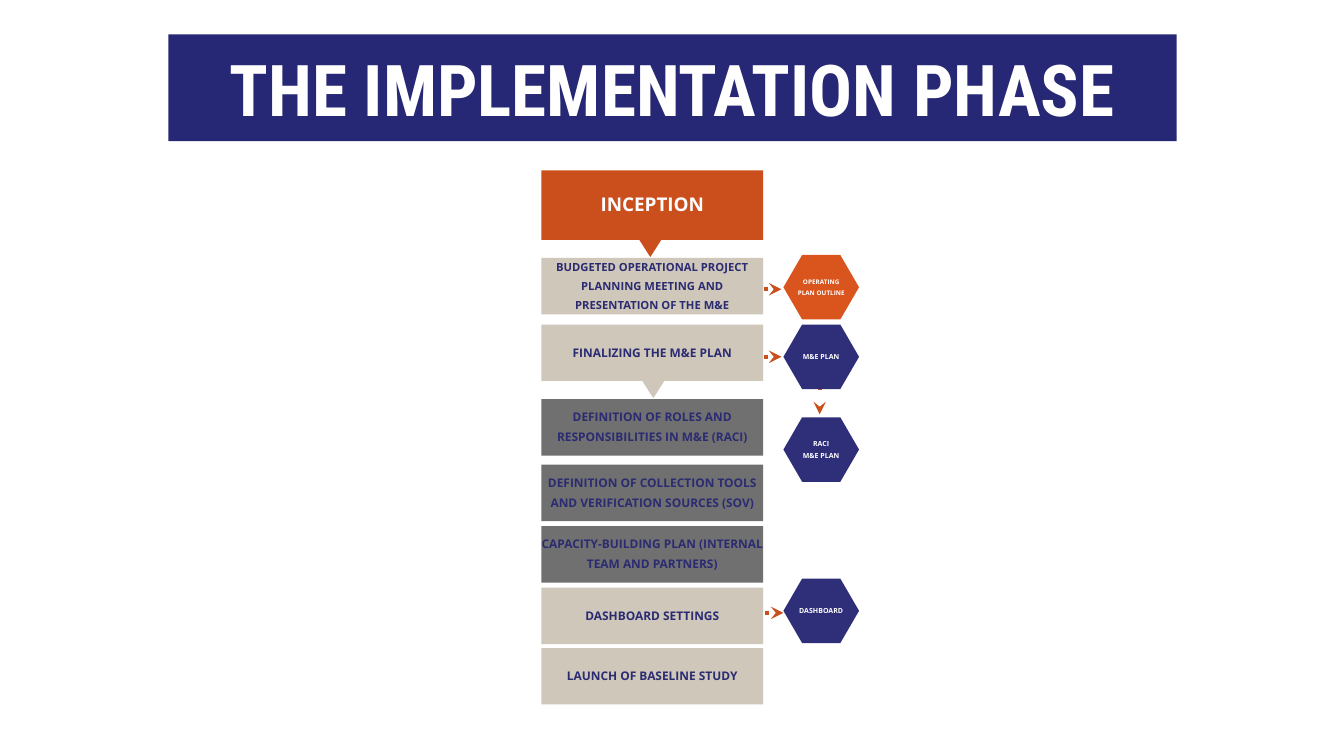
from lxml import etree
from pptx import Presentation
from pptx.dml.color import RGBColor
from pptx.enum import shapes, text
from pptx.oxml.ns import qn
from pptx.util import Inches, Pt

ORANGE, SAND, GREY = "CA4F1C", "CFC7BA", "707070"
NAVY, INK, WHITE = "2E2E79", "2B2B72", "FFFFFF"


def rgb(value):
    return RGBColor.from_string(value)


def add_block(kind, left, top, width, height, fill, label="", size=8.5,
              ink=WHITE, bottom_inset=0.06):
    """Add a filled shape with a bold, centred label."""
    block = slide.shapes.add_shape(
        kind, Inches(left), Inches(top), Inches(width), Inches(height))
    block.shadow.inherit = False
    block.fill.solid()
    block.fill.fore_color.rgb = rgb(fill)
    block.line.fill.background()
    if label:
        frame = block.text_frame
        frame.text = label
        frame.word_wrap = True
        frame.vertical_anchor = text.MSO_ANCHOR.MIDDLE
        frame.margin_left = frame.margin_right = frame.margin_top = 0
        frame.margin_bottom = Inches(bottom_inset)
        for paragraph in frame.paragraphs:
            paragraph.alignment = text.PP_ALIGN.CENTER
            paragraph.line_spacing = 1.4
            font = paragraph.runs[0].font
            font.name, font.size, font.bold = "Open Sans", Pt(size), True
            font.color.rgb = rgb(ink)
    return block


prs = Presentation()
prs.slide_width, prs.slide_height = Inches(13.33), Inches(7.5)
slide = prs.slides.add_slide(prs.slide_layouts[5])

# Title banner
title = slide.shapes.title
title.left, title.top = Inches(1.67), Inches(0.34)
title.width, title.height = Inches(10), Inches(1.06)
title.fill.solid()
title.fill.fore_color.rgb = rgb("262775")
title.text_frame.text = "THE IMPLEMENTATION PHASE"
title.text_frame.auto_size = text.MSO_AUTO_SIZE.NONE
title.text_frame.vertical_anchor = text.MSO_ANCHOR.MIDDLE
heading = title.text_frame.paragraphs[0]
heading.alignment = text.PP_ALIGN.CENTER
heading_font = heading.runs[0].font
heading_font.name, heading_font.size, heading_font.bold = "Roboto Condensed", Pt(51), True
heading_font.color.rgb = rgb(WHITE)

# Phase arrows, partly hidden behind the steps
for left, top, height, fill in [(6.28, 3.27, 0.68, SAND), (6.25, 1.73, 0.82, ORANGE)]:
    phase_arrow = add_block(shapes.MSO_SHAPE.DOWN_ARROW, left, top, 0.4, height, fill)
    phase_arrow.adjustments[0] = 0.22
    phase_arrow.adjustments[1] = 0.78

# Dotted links from steps to deliverables
for x1, y1, x2, y2 in [(6.74, 2.87, 7.75, 2.87), (6.74, 3.54, 7.75, 3.54),
                       (8.13, 3.66, 8.13, 4.11), (6.75, 6.08, 7.77, 6.08)]:
    link = slide.shapes.add_connector(
        shapes.MSO_CONNECTOR.STRAIGHT, Inches(x1), Inches(y1), Inches(x2), Inches(y2))
    link.line.color.rgb = rgb(ORANGE)
    link.line.width = Pt(3)
    outline = link.line._get_or_add_ln()
    etree.SubElement(outline, qn("a:prstDash"), val="dot")
    etree.SubElement(outline, qn("a:tailEnd"), type="stealth")
    etree.SubElement(link._element.spPr, qn("a:effectLst"))

# Steps
add_block(shapes.MSO_SHAPE.RECTANGLE, 5.37, 1.69, 2.2, 0.69, ORANGE,
          "INCEPTION", 13.5, bottom_inset=0.12)
steps = [
    (2.56, SAND, 8, "BUDGETED OPERATIONAL PROJECT PLANNING MEETING AND PRESENTATION OF THE M&E"),
    (3.22, SAND, 8.5, "FINALIZING THE M&E PLAN"),
    (3.96, GREY, 8.5, "DEFINITION OF ROLES AND RESPONSIBILITIES IN M&E (RACI)"),
    (4.61, GREY, 8.5, "DEFINITION OF COLLECTION TOOLS AND VERIFICATION SOURCES (SOV)"),
    (5.22, GREY, 8.5, "CAPACITY-BUILDING PLAN (INTERNAL TEAM AND PARTNERS)"),
    (5.83, SAND, 8.5, "DASHBOARD SETTINGS"),
    (6.43, SAND, 8.5, "LAUNCH OF BASELINE STUDY"),
]
for top, fill, size, label in steps:
    add_block(shapes.MSO_SHAPE.RECTANGLE, 5.37, top, 2.2, 0.56, fill, label, size, INK)

# Deliverables
deliverables = [
    (2.53, "DA551E", 4.5, "OPERATING PLAN OUTLINE"),
    (3.22, NAVY, 5, "M&E PLAN"),
    (4.14, NAVY, 5, "RACI\nM&E PLAN"),
    (5.74, NAVY, 5, "DASHBOARD"),
]
for top, fill, size, label in deliverables:
    deliverable = add_block(shapes.MSO_SHAPE.HEXAGON, 7.77, top, 0.75, 0.64,
                            fill, label, size, bottom_inset=0.03)
    deliverable.adjustments[0] = 0.29

prs.save("out.pptx")
